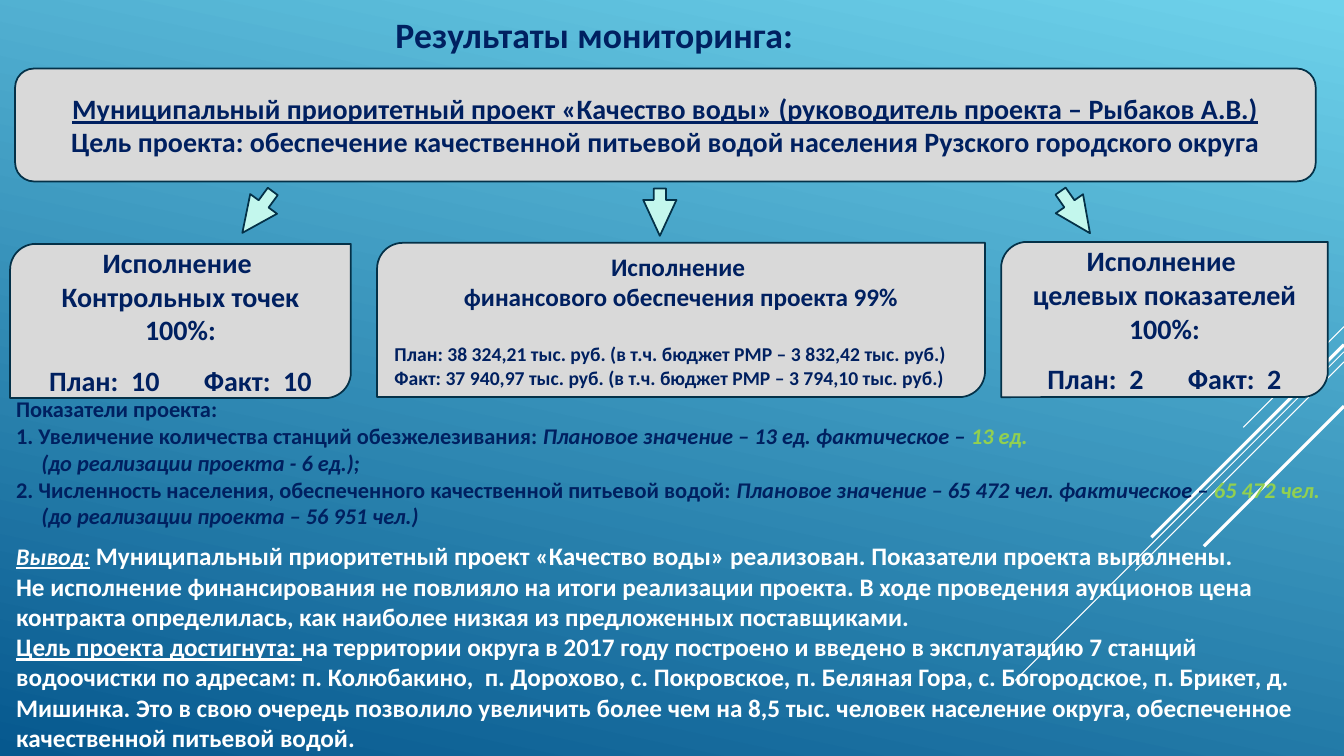
from lxml.etree import SubElement
from pptx import Presentation
from pptx.dml.color import RGBColor
from pptx.enum.shapes import MSO_CONNECTOR as Connector, MSO_SHAPE as Shape
from pptx.enum.text import MSO_ANCHOR as Anchor, MSO_AUTO_SIZE as AutoSize, PP_ALIGN as Align
from pptx.oxml.ns import qn
from pptx.util import Inches, Pt

NAVY, WHITE, GREEN = "002060", "FFFFFF", "92D050"
GREY, MINT, OUTLINE = "D9D9D9", "C3F7ED", "043148"


def color(value):
    return RGBColor.from_string(value)


def write(frame, *runs, size=18, ink=NAVY, align=Align.LEFT, before=0, after=0,
          indent=0, **style):
    """Add a paragraph; each run is a string or a (string, overrides) pair."""
    first = frame.paragraphs[0]
    paragraph = frame.add_paragraph() if first.runs else first
    paragraph.alignment = align
    paragraph.space_before, paragraph.space_after = Pt(before), Pt(after)
    props = paragraph._p.get_or_add_pPr()
    props.set("marL", str(Inches(indent)))
    props.set("indent", "0")
    SubElement(props, qn("a:buNone"))
    for item in runs:
        text, overrides = (item, {}) if isinstance(item, str) else item
        look = {"size": size, "ink": ink, "bold": True, **style, **overrides}
        run = paragraph.add_run()
        run.text = text
        font = run.font
        font.name, font.size = "Calibri", Pt(look["size"])
        font.color.rgb = color(look["ink"])
        font.bold = look["bold"]
        font.italic = look.get("italic", False)
        font.underline = look.get("underline", False)
        if "spacing" in look:
            run._r.get_or_add_rPr().set("spc", str(look["spacing"] * 100))


def place(placeholder, left, top, width, height, anchor):
    placeholder.left, placeholder.top = Inches(left), Inches(top)
    placeholder.width, placeholder.height = Inches(width), Inches(height)
    frame = placeholder.text_frame
    frame.auto_size, frame.word_wrap = AutoSize.NONE, True
    frame.vertical_anchor = anchor
    return frame


def add_outlined(slide, kind, left, top, width, height, fill):
    shape = slide.shapes.add_shape(kind, Inches(left), Inches(top), Inches(width), Inches(height))
    shape.shadow.inherit = False
    shape.fill.solid()
    shape.fill.fore_color.rgb = color(fill)
    shape.line.color.rgb = color(OUTLINE)
    shape.line.width = Pt(1.25)
    return shape


def add_panel(slide, kind, *bounds):
    frame = add_outlined(slide, kind, *bounds, GREY).text_frame
    frame.word_wrap, frame.vertical_anchor = True, Anchor.MIDDLE
    return frame


def add_arrow(slide, left, top, height, rotation):
    arrow = add_outlined(slide, Shape.DOWN_ARROW, left, top, 0.33, height, MINT)
    arrow.adjustments[0], arrow.adjustments[1] = 0.371, 1.081
    arrow.rotation = rotation


def add_ray(slide, start_y, length, width):
    """Draw a 45-degree ray from the right edge, behind all text."""
    edge = 13.33
    ray = slide.shapes.add_connector(Connector.STRAIGHT, Inches(edge), Inches(start_y),
                                     Inches(edge - length), Inches(start_y + length))
    ray.line.color.rgb = color(WHITE)
    ray.line.width = Pt(width)
    SubElement(ray._element.spPr, qn("a:effectLst"))
    slide.shapes._spTree.insert(2, ray._element)


def paint_background(slide):
    fill = slide.background.fill
    fill.gradient()
    fill.gradient_angle = 258
    for stop, (position, value) in zip(fill.gradient_stops, [(0, "6ED2EB"), (1, "06588E")]):
        stop.position = position
        stop.color.rgb = color(value)


def add_score_panel(slide, bounds, subject, plan, fact):
    frame = add_panel(slide, Shape.ROUND_2_DIAG_RECTANGLE, *bounds)
    write(frame, "Исполнение ", size=20, align=Align.CENTER)
    write(frame, f"{subject} 100%:", size=20, align=Align.CENTER)
    # One widely spaced blank separates plan from fact
    write(frame, f"План:  {plan}", (" ", {"spacing": 27}), f"Факт:  {fact}",
          size=20, align=Align.CENTER, before=12)


def add_findings(frame):
    frame.margin_left, frame.margin_right = Inches(0.16), Inches(0.1)
    frame.margin_top = frame.margin_bottom = Inches(0.05)
    italic, green = {"italic": True}, {"italic": True, "ink": GREEN}

    # Indicators
    write(frame, "Показатели проекта:", size=16)
    indicators = [
        ("1. Увеличение количества станций обезжелезивания: ", "13 ед.",
         "(до реализации проекта - 6 ед.);"),
        ("2. Численность населения, обеспеченного качественной питьевой водой: ", "65 472 чел.",
         "(до реализации проекта – 56 951 чел.)"),
    ]
    for name, value, earlier in indicators:
        write(frame, name, (f"Плановое значение – {value} фактическое – ", italic),
              (value, green), size=16)
        write(frame, earlier, size=16, indent=0.25, italic=True)

    # Conclusion
    write(frame, ("Вывод:", {"size": 17, "italic": True, "underline": True}),
          " Муниципальный приоритетный проект «Качество воды» реализован. "
          "Показатели проекта выполнены.", ink=WHITE, before=8)
    write(frame, "Не исполнение финансирования не повлияло на итоги реализации проекта. "
          "В ходе проведения аукционов цена контракта определилась, как наиболее низкая "
          "из предложенных поставщиками.", ink=WHITE)
    write(frame, ("Цель проекта достигнута: ", {"underline": True}),
          "на территории округа в 2017 году построено и введено в эксплуатацию 7 станций "
          "водоочистки по адресам: п. Колюбакино,  п. Дорохово, с. Покровское, "
          "п. Беляная Гора, с. Богородское, п. Брикет, д. Мишинка. Это в свою очередь "
          "позволило увеличить более чем на 8,5 тыс. человек население округа, "
          "обеспеченное качественной питьевой водой.", ink=WHITE)


def main():
    deck = Presentation()
    deck.slide_width, deck.slide_height = Inches(13.33), Inches(7.5)
    slide = deck.slides.add_slide(deck.slide_layouts[1])
    paint_background(slide)

    # Decorative rays
    for start_y, length, width in [(3.24, 1, 0.75), (3.49, 3.26, 0.75), (3.59, 2.07, 0.75),
                                   (3.42, 1.91, 2.25), (4.03, 1.39, 2.25)]:
        add_ray(slide, start_y, length, width)

    # Title and findings
    title = place(slide.shapes.title, 1.23, 0.1, 9.33, 0.48, Anchor.MIDDLE)
    write(title, "Результаты мониторинга:", size=25.5, align=Align.CENTER)
    add_findings(place(slide.placeholders[1], 0, 3.87, 13.35, 4.66, Anchor.TOP))

    # Project and its goal
    project = add_panel(slide, Shape.ROUNDED_RECTANGLE, 0.15, 0.68, 12.9, 1.12)
    write(project, "Муниципальный приоритетный проект «Качество воды» "
          "(руководитель проекта – Рыбаков А.В.)", size=20, align=Align.CENTER, underline=True)
    write(project, "Цель проекта: обеспечение качественной питьевой водой населения "
          "Рузского городского округа", size=20, align=Align.CENTER)

    # Results in three panels
    add_score_panel(slide, (0.1, 2.42, 3.38, 1.53), "Контрольных точек", 10, 10)
    finance = add_panel(slide, Shape.ROUND_2_DIAG_RECTANGLE, 3.74, 2.41, 6.03, 1.53)
    write(finance, "Исполнение ", align=Align.CENTER)
    write(finance, "финансового обеспечения проекта 99%", align=Align.CENTER)
    write(finance, "План: 38 324,21 тыс. руб. (в т.ч. бюджет РМР – 3 832,42 тыс. руб.)",
          size=14, before=22)
    write(finance, "Факт: 37 940,97 тыс. руб. (в т.ч. бюджет РМР – 3 794,10 тыс. руб.)", size=14)
    add_score_panel(slide, (9.93, 2.4, 3.24, 1.54), "целевых показателей", 2, 2)

    # Arrows from the project to its results
    for left, top, height, rotation in [(2.39, 1.85, 0.51, 36.3), (6.38, 1.87, 0.47, 0),
                                        (10.5, 1.85, 0.51, 325.1)]:
        add_arrow(slide, left, top, height, rotation)

    deck.save("out.pptx")


if __name__ == "__main__":
    main()
